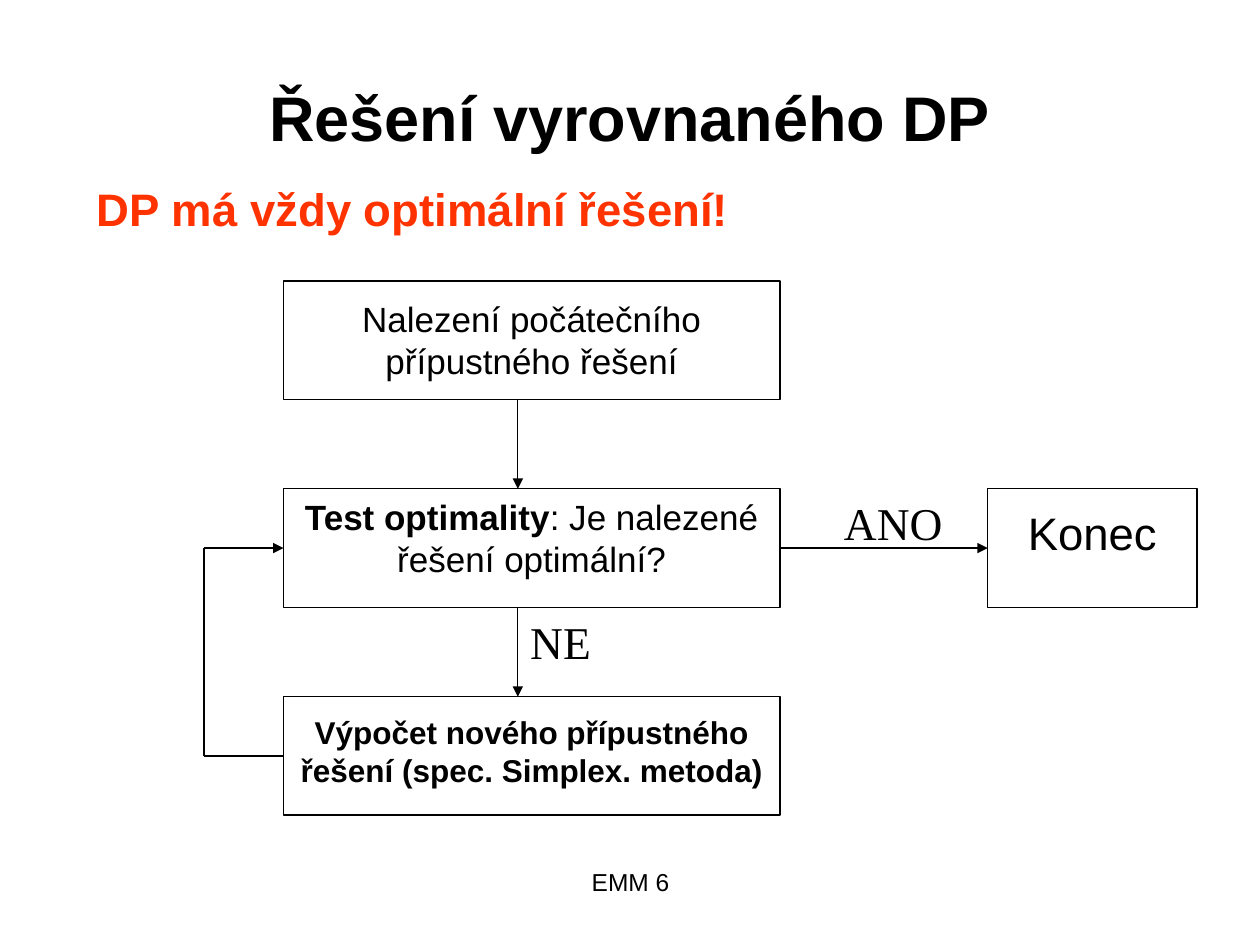
from lxml.etree import SubElement
from pptx import Presentation
from pptx.dml.color import RGBColor
from pptx.enum.shapes import MSO_CONNECTOR, MSO_SHAPE
from pptx.enum.text import MSO_ANCHOR, PP_ALIGN
from pptx.oxml.ns import qn
from pptx.util import Inches, Pt

THEME = {
    "ink": RGBColor(0, 0, 0),
    "paper": RGBColor(255, 255, 255),
    "accent": RGBColor(0xFF, 0x33, 0x00),
    "sans": "Arial",
    "serif": "Times New Roman",
    "title": 36, "large": 26, "step": 20, "small_step": 18, "footer": 14,
    "line": 0.75,
}

# Flowchart grid
STEP_LEFT, STEP_WIDTH, STEP_HEIGHT = 2.25, 3.94, 0.94
FIRST_TOP, ROW_PITCH = 2.23, 1.65
END_LEFT, END_WIDTH = 7.84, 1.66
ARROW_X, LOOP_X = 4.11, 1.62
tops = [FIRST_TOP + row * ROW_PITCH for row in range(3)]
middles = [top + STEP_HEIGHT / 2 for top in tops]
step_right = STEP_LEFT + STEP_WIDTH

# Spans (text, bold), left, row, width, type size, top inset
STEPS = [
    ([("Nalezení počátečního přípustného řešení", False)],
     STEP_LEFT, 0, STEP_WIDTH, "step", 0.13),
    ([("Test optimality", True), (": Je nalezené řešení optimální?", False)],
     STEP_LEFT, 1, STEP_WIDTH, "step", 0.05),
    ([("Výpočet nového přípustného řešení (spec. Simplex. metoda)", True)],
     STEP_LEFT, 2, STEP_WIDTH, "small_step", 0.13),
    ([("Konec", False)], END_LEFT, 1, END_WIDTH, "large", 0.13),
]

# Start, end, arrowhead
LINKS = [
    ((ARROW_X, tops[0] + STEP_HEIGHT), (ARROW_X, tops[1]), True),
    ((step_right, middles[1]), (END_LEFT, middles[1]), True),
    ((ARROW_X, tops[1] + STEP_HEIGHT), (ARROW_X, tops[2]), True),
    ((STEP_LEFT, middles[2]), (LOOP_X, middles[2]), False),
    ((LOOP_X, middles[2]), (LOOP_X, middles[1]), False),
    ((LOOP_X, middles[1]), (STEP_LEFT, middles[1]), True),
]

# Text, place, size, font, colour, bold, alignment, anchor
LABELS = [
    ("Řešení vyrovnaného DP", (0.5, 0.3, 9, 1.25), "title", "sans", "ink", True,
     PP_ALIGN.CENTER, MSO_ANCHOR.MIDDLE),
    ("DP má vždy optimální řešení!", (0.67, 1.39, 7.24, 0.53), "large", "sans",
     "accent", True, PP_ALIGN.LEFT, MSO_ANCHOR.TOP),
    ("ANO", (6.6, tops[1], 1.04, 0.71), "large", "serif", "ink", False,
     PP_ALIGN.LEFT, MSO_ANCHOR.TOP),
    ("NE", (ARROW_X, tops[1] + STEP_HEIGHT, 1.04, 0.71), "large", "serif", "ink",
     False, PP_ALIGN.LEFT, MSO_ANCHOR.TOP),
    ("EMM 6", (3.42, 6.83, 3.17, 0.52), "footer", "sans", "ink", False,
     PP_ALIGN.CENTER, MSO_ANCHOR.TOP),
]


def write(box, spans, size, font="sans", color="ink", align=PP_ALIGN.CENTER,
          anchor=MSO_ANCHOR.TOP, inset=0.05):
    frame = box.text_frame
    frame_format = {"word_wrap": True, "vertical_anchor": anchor,
                    "margin_top": Inches(inset)}
    for name, value in frame_format.items():
        setattr(frame, name, value)
    paragraph = frame.paragraphs[0]
    paragraph.alignment = align
    for text, bold in spans:
        span = paragraph.add_run()
        span.text = text
        span_format = {"name": THEME[font], "size": Pt(THEME[size]), "bold": bold}
        for name, value in span_format.items():
            setattr(span.font, name, value)
        span.font.color.rgb = THEME[color]


def style_line(line):
    line.color.rgb = THEME["ink"]
    line.width = Pt(THEME["line"])


def add_step(page, spans, left, row, width, size, inset):
    place = map(Inches, (left, tops[row], width, STEP_HEIGHT))
    box = page.shapes.add_shape(MSO_SHAPE.RECTANGLE, *place)
    box.shadow.inherit = False
    box.fill.solid()
    box.fill.fore_color.rgb = THEME["paper"]
    style_line(box.line)
    write(box, spans, size, inset=inset)


def add_link(page, start, end, arrow):
    link = page.shapes.add_connector(
        MSO_CONNECTOR.STRAIGHT, *map(Inches, start + end))
    style_line(link.line)
    if arrow:
        SubElement(link.line._get_or_add_ln(), qn("a:tailEnd"), type="triangle")
    SubElement(link._element.spPr, qn("a:effectLst"))


def add_label(page, text, place, size, font, color, bold, align, anchor):
    box = page.shapes.add_textbox(*map(Inches, place))
    write(box, [(text, bold)], size, font, color, align, anchor)


def main():
    deck = Presentation()
    deck.slide_width, deck.slide_height = Inches(10), Inches(7.5)
    page = deck.slides.add_slide(deck.slide_layouts[6])
    for step in STEPS:
        add_step(page, *step)
    for link in LINKS:
        add_link(page, *link)
    for label in LABELS:
        add_label(page, *label)
    deck.save("out.pptx")


if __name__ == "__main__":
    main()
